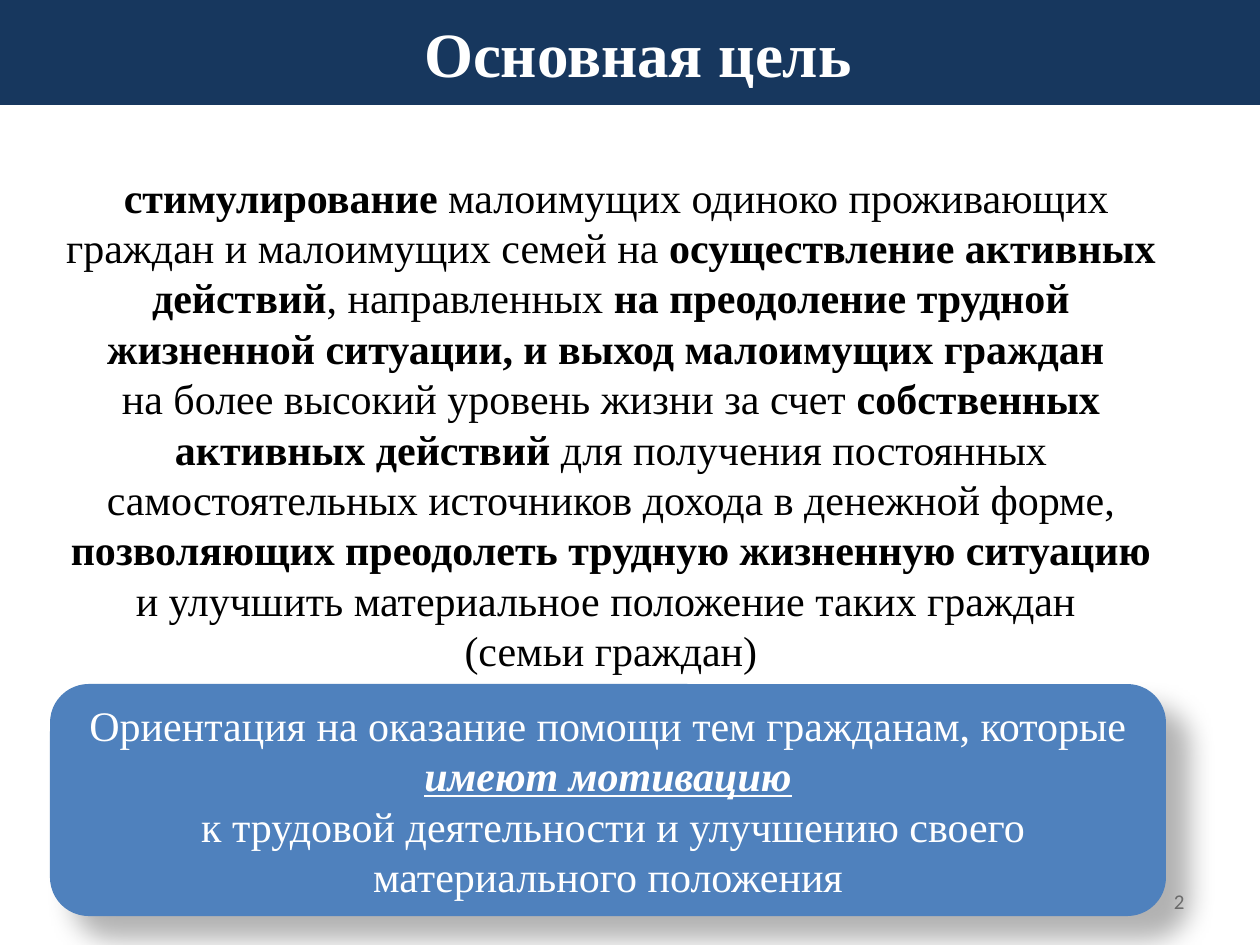
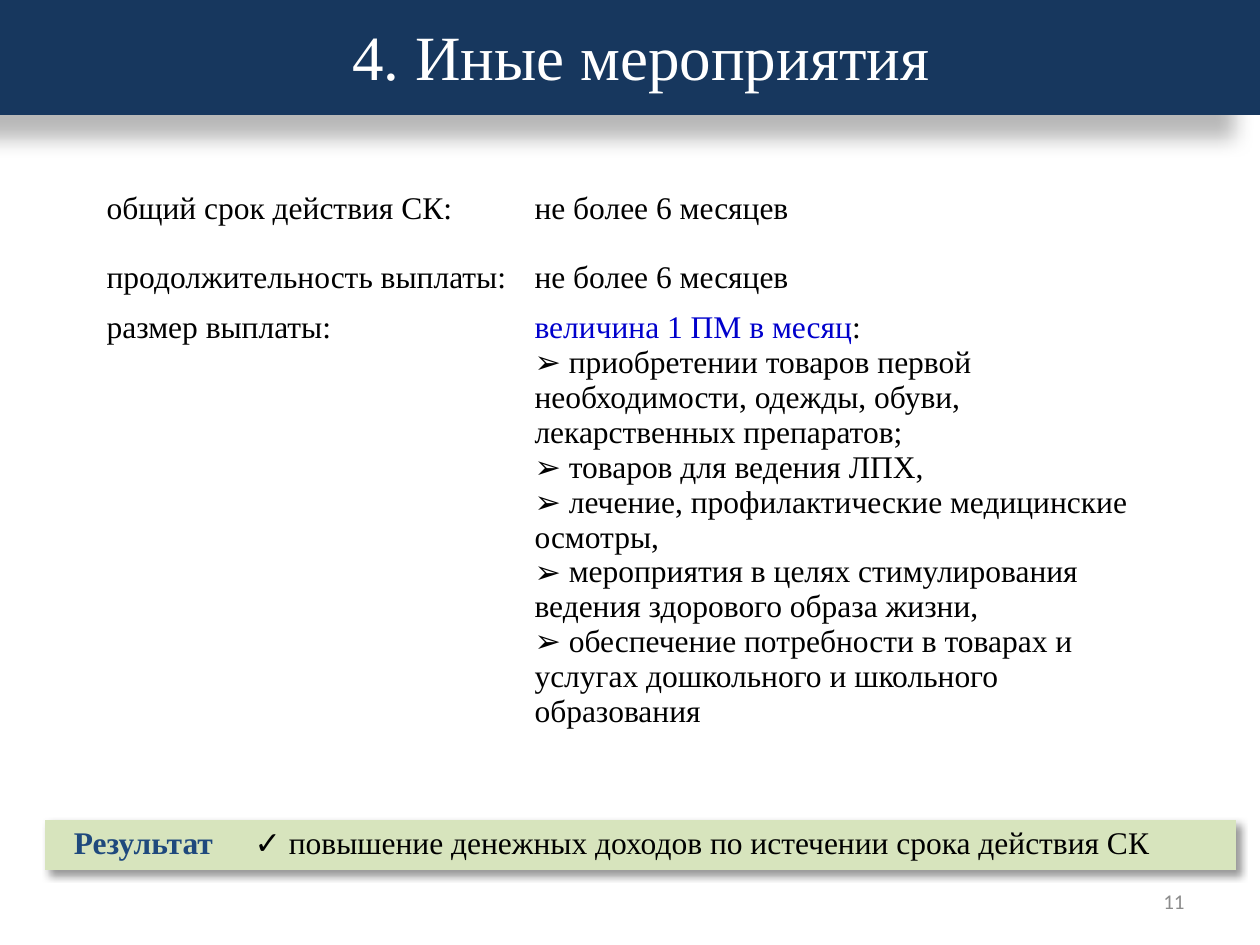
from lxml.etree import SubElement
from pptx import Presentation
from pptx.dml.color import RGBColor
from pptx.enum.shapes import MSO_SHAPE
from pptx.enum.text import MSO_ANCHOR, PP_ALIGN
from pptx.oxml.ns import qn
from pptx.util import Emu, Pt

PX_PER_INCH = 126
W, H = 1260, 945

NAVY, BLUE, GREEN = "17375E", "4F81BD", "D7E4BD"
WHITE, BLACK, GREY = "FFFFFF", "000000", "8C8C8C"
LINK_BLUE, LABEL_BLUE = "0000CC", "1F497D"
SERIF = "Times New Roman"
NO_STYLE = "{2D5ABB26-0587-4C30-8999-92F81FD0307C}"
BOLD = {"bold": True}


def px(n):
    return Emu(round(n * 914400 / PX_PER_INCH))


def box(*lengths):
    return [px(n) for n in lengths]


def rgb(color):
    return RGBColor.from_string(color)


# Text
def format_run(r, size=18, font=SERIF, color=BLACK, bold=False, italic=False, underline=False):
    f = r.font
    f.size, f.name, f.color.rgb = Pt(size), font, rgb(color)
    f.bold, f.italic, f.underline = bold, italic, underline


def set_bullet(p, char):
    pPr = p._p.get_or_add_pPr()
    pPr.set("marL", "0")
    pPr.set("indent", "0")
    SubElement(pPr, qn("a:buFont"), typeface="Arial")
    SubElement(pPr, qn("a:buChar"), char=char)


def write_text(tf, paragraphs, align=PP_ALIGN.LEFT, anchor=MSO_ANCHOR.TOP,
               bullet=None, bullet_from=0, **fmt):
    """Each paragraph is a string or a list of strings and (string, format) pairs."""
    tf.word_wrap = True
    tf.vertical_anchor = anchor
    for i, runs in enumerate(paragraphs):
        p = tf.paragraphs[0] if i == 0 else tf.add_paragraph()
        p.alignment = align
        if bullet and i >= bullet_from:
            set_bullet(p, bullet)
        for run in [runs] if isinstance(runs, str) else runs:
            text, own = (run, {}) if isinstance(run, str) else run
            for n, line in enumerate(text.split("\n")):
                if n:
                    p.add_line_break()
                if line:
                    r = p.add_run()
                    r.text = line
                    format_run(r, **{**fmt, **own})


def add_text(slide, at, paragraphs, **fmt):
    tf = slide.shapes.add_textbox(*box(*at)).text_frame
    write_text(tf, paragraphs, **fmt)


# Shapes
def add_shadow(effects, alpha, blur, dist, angle):
    shadow = SubElement(effects, qn("a:outerShdw"), blurRad=str(Pt(blur)), dist=str(Pt(dist)),
                        dir=str(angle * 60000), algn="tl", rotWithShape="0")
    color = SubElement(shadow, qn("a:srgbClr"), val=BLACK)
    SubElement(color, qn("a:alpha"), val=str(alpha * 1000))


def add_block(slide, kind, at, fill, shadow=None):
    sp = slide.shapes.add_shape(kind, *box(*at))
    sp.fill.solid()
    sp.fill.fore_color.rgb = rgb(fill)
    sp.line.fill.background()
    sp.shadow.inherit = False
    if shadow:
        add_shadow(sp._element.spPr.find(qn("a:effectLst")), *shadow)
    return sp


def add_title(slide, text, band_height, at, shadow=None, bold=False):
    add_block(slide, MSO_SHAPE.RECTANGLE, (0, 0, W, band_height), NAVY, shadow)
    title = slide.shapes.title
    title.left, title.top, title.width, title.height = box(*at)
    write_text(title.text_frame, [text], align=PP_ALIGN.CENTER, anchor=MSO_ANCHOR.MIDDLE,
               size=36, color=WHITE, bold=bold)
    slide.shapes._spTree.append(title._element)  # in front of the band


def add_page_number(slide, number):
    add_text(slide, (903, 876, 294, 50), [str(number)], align=PP_ALIGN.RIGHT,
             anchor=MSO_ANCHOR.MIDDLE, size=12, font="Calibri", color=GREY)


# Tables
def add_table(slide, left, top, cols, rows, cells, fill=None, shadow=None):
    """Each cell is a pair of paragraphs and text format."""
    frame = slide.shapes.add_table(len(rows), len(cols), *box(left, top, sum(cols), sum(rows)))
    table = frame.table
    table.first_row = table.horz_banding = False
    tblPr = table._tbl.tblPr
    tblPr.find(qn("a:tableStyleId")).text = NO_STYLE
    if shadow:
        effects = SubElement(tblPr, qn("a:effectLst"))
        tblPr.insert(0, effects)
        add_shadow(effects, *shadow)
    for column, width in zip(table.columns, cols):
        column.width = px(width)
    for row, height, contents in zip(table.rows, rows, cells):
        row.height = px(height)
        for cell, (paragraphs, fmt) in zip(row.cells, contents):
            if fill:
                cell.fill.solid()
                cell.fill.fore_color.rgb = rgb(fill)
            else:
                cell.fill.background()
            write_text(cell.text_frame, paragraphs, **fmt)


# Slides
def build_goal(slide):
    goal = [
        " ", ("стимулирование", BOLD),
        " малоимущих одиноко проживающих граждан и малоимущих семей на ",
        ("осуществление активных действий", BOLD), ", направленных ",
        ("на преодоление трудной жизненной ситуации, и выход малоимущих граждан \n", BOLD),
        "на более высокий уровень жизни за счет ", ("собственных активных действий ", BOLD),
        "для получения постоянных самостоятельных источников дохода в денежной форме, ",
        ("позволяющих преодолеть трудную жизненную ситуацию", BOLD),
        " и улучшить материальное положение таких граждан ",
    ]
    motivation = [
        "Ориентация на оказание помощи тем гражданам, которые ",
        ("имеют мотивацию\n", {"bold": True, "italic": True, "underline": True}),
        " к трудовой деятельности и улучшению своего материального положения",
    ]
    centred = {"align": PP_ALIGN.CENTER, "size": 24}
    add_text(slide, (44, 165, 1134, 515), [goal, "(семьи граждан)"], **centred)
    add_page_number(slide, 2)
    add_title(slide, "Основная цель", 105, (71, 3, 1134, 98), bold=True)
    sp = add_block(slide, MSO_SHAPE.ROUNDED_RECTANGLE, (50, 684, 1116, 232), BLUE,
                   shadow=(30, 15, 18, 45))
    write_text(sp.text_frame, [motivation], anchor=MSO_ANCHOR.MIDDLE, color=WHITE, **centred)


def build_other_measures(slide):
    payment = [
        [("величина 1 ПМ в месяц", {"color": LINK_BLUE}), ":"],
        " приобретении товаров первой необходимости, одежды, обуви, лекарственных препаратов;",
        " товаров для ведения ЛПХ,",
        " лечение, профилактические медицинские осмотры,",
        " мероприятия в целях стимулирования ведения здорового образа жизни,",
        " обеспечение потребности в товарах и услугах дошкольного и школьного образования",
    ]
    terms = [
        [(["общий срок действия СК:"], {}), (["не более 6 месяцев"], {})],
        [(["продолжительность выплаты:"], {}), (["не более 6 месяцев"], {})],
        [(["размер выплаты:"], {}), (payment, {"bullet": "➢", "bullet_from": 1})],
    ]
    result = [[
        (["Результат"], {"align": PP_ALIGN.CENTER, "color": LABEL_BLUE, "bold": True}),
        ([" повышение денежных доходов по истечении срока действия СК"], {"bullet": "✓"}),
    ]]
    add_page_number(slide, 11)
    add_table(slide, 94, 185, [428, 654], [69, 45, 472], terms)
    add_table(slide, 45, 820, [197, 994], [45], result, fill=GREEN, shadow=(40, 4, 4, 45))
    add_title(slide, "4. Иные мероприятия", 115, (74, 6, 1134, 98), shadow=(28, 11.8, 19.7, 141))


def main():
    prs = Presentation()
    prs.slide_width, prs.slide_height = px(W), px(H)
    for build in (build_goal, build_other_measures):
        build(prs.slides.add_slide(prs.slide_layouts[5]))
    prs.save("out.pptx")


if __name__ == "__main__":
    main()
